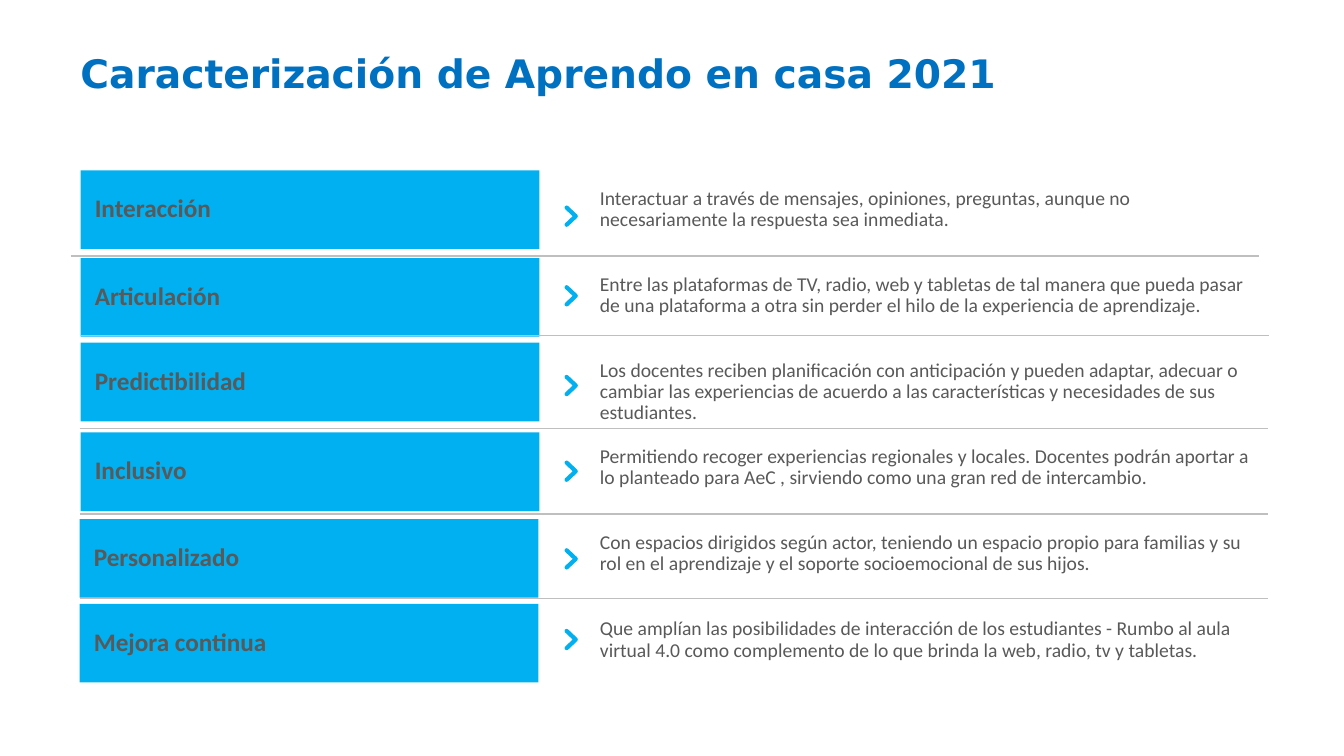
from dataclasses import dataclass

from lxml import etree
from pptx import Presentation
from pptx.dml.color import RGBColor
from pptx.enum import shapes, text
from pptx.oxml import ns
from pptx.util import Inches, Pt


@dataclass(frozen=True)
class Theme:
    title_color: RGBColor = RGBColor.from_string("0070C0")
    accent: RGBColor = RGBColor.from_string("00B0F0")
    ink: RGBColor = RGBColor.from_string("595959")
    rule: RGBColor = RGBColor.from_string("BFBFBF")
    paper: RGBColor = RGBColor.from_string("FFFFFF")
    title_font: str = "DejaVu Sans"
    body_font: str = "Calibri"
    title_size: int = 28
    label_size: int = 18
    detail_size: int = 14


THEME = Theme()

# Feature, label left, label top, chevron top, description
FEATURES = [
    ("Interacción", 0.8, 1.69, 2.06,
     "Interactuar a través de mensajes, opiniones, preguntas, aunque no "
     "necesariamente la respuesta sea inmediata."),
    ("Articulación", 0.8, 2.56, 2.85,
     "Entre las plataformas de TV, radio, web y tabletas de tal manera que pueda "
     "pasar de una plataforma a otra sin perder el hilo de la experiencia de "
     "aprendizaje."),
    ("Predictibilidad", 0.8, 3.4, 3.74,
     "Los docentes reciben planificación con anticipación y pueden adaptar, "
     "adecuar o cambiar las experiencias de acuerdo a las características y "
     "necesidades de sus estudiantes."),
    ("Inclusivo", 0.8, 4.29, 4.59,
     "Permitiendo recoger experiencias regionales y locales. Docentes podrán "
     "aportar a lo planteado para AeC , sirviendo como una gran red de "
     "intercambio."),
    ("Personalizado", 0.79, 5.15, 5.46,
     "Con espacios dirigidos según actor, teniendo un espacio propio para familias "
     "y su rol en el aprendizaje y el soporte socioemocional de sus hijos."),
    ("Mejora continua", 0.79, 5.99, 6.26,
     "Que amplían las posibilidades de interacción de los estudiantes - Rumbo al "
     "aula virtual 4.0 como complemento de lo que brinda la web, radio, tv y "
     "tabletas."),
]

# Left end and height of each separator
SEPARATORS = [(0.7, 2.54), (0.8, 3.33), (0.79, 4.25), (0.79, 5.1), (0.79, 5.94)]
SEPARATOR_WIDTH = 11.79

ROW_HEIGHT = 0.78
DETAIL_TOP, DETAIL_PITCH = 1.76, 0.85 + 0.02 / 5


def write(shape, words, size, color, font, bold=False, margins=(0.1, 0.05, 0.1, 0.05),
          anchor=text.MSO_ANCHOR.MIDDLE):
    frame = shape.text_frame
    frame.word_wrap = True
    frame.vertical_anchor = anchor
    (frame.margin_left, frame.margin_top,
     frame.margin_right, frame.margin_bottom) = map(Inches, margins)
    paragraph = frame.paragraphs[0]
    paragraph.text = words
    paragraph.alignment = text.PP_ALIGN.LEFT
    paragraph.line_spacing = 0.9
    paragraph.font.size = Pt(size)
    paragraph.font.bold = bold
    paragraph.font.name = font
    paragraph.font.color.rgb = color


def add_title(slide, words):
    title = slide.shapes.add_textbox(*map(Inches, (0.7, 0.37, 11.5, 0.76)))
    write(title, words, THEME.title_size, THEME.title_color, THEME.title_font, bold=True)


def add_panel(slide, left, top, width, fill):
    panel = slide.shapes.add_shape(
        shapes.MSO_SHAPE.RECTANGLE,
        Inches(left), Inches(top), Inches(width), Inches(ROW_HEIGHT))
    panel.shadow.inherit = False
    panel.fill.solid()
    panel.fill.fore_color.rgb = fill
    panel.line.fill.background()
    return panel


def add_detail(slide, top, words):
    detail = add_panel(slide, 5.94, top, 6.82, THEME.paper)
    write(detail, words, THEME.detail_size, THEME.ink, THEME.body_font,
          margins=(0.01, 0.11, 0.3, 0.11), anchor=text.MSO_ANCHOR.TOP)


def add_label(slide, left, top, words):
    label = add_panel(slide, left, top, 4.55, THEME.accent)
    write(label, words, THEME.label_size, THEME.ink, THEME.body_font, bold=True,
          margins=(0.14, 0.09, 0.14, 0.09))


def add_separator(slide, left, top):
    separator = slide.shapes.add_connector(
        shapes.MSO_CONNECTOR.STRAIGHT,
        Inches(left), Inches(top), Inches(left + SEPARATOR_WIDTH), Inches(top))
    separator.line.color.rgb = THEME.rule
    separator.line.width = Pt(1)
    etree.SubElement(separator._element.spPr, ns.qn("a:effectLst"))


def add_chevron(slide, top):
    left, width, height = 5.62, 0.09, 0.17
    outline = slide.shapes.build_freeform(Inches(left), Inches(top))
    outline.add_line_segments(
        [(Inches(left + width), Inches(top + height / 2)),
         (Inches(left), Inches(top + height))], close=False)
    chevron = outline.convert_to_shape()
    chevron.shadow.inherit = False
    chevron.fill.background()
    chevron.line.color.rgb = THEME.accent
    chevron.line.width = Pt(3)
    # Rounded ends and corner
    stroke = chevron.line._get_or_add_ln()
    stroke.set("cap", "rnd")
    etree.SubElement(stroke, ns.qn("a:round"))


def main():
    deck = Presentation()
    deck.slide_width, deck.slide_height = Inches(13.33), Inches(7.5)
    slide = deck.slides.add_slide(deck.slide_layouts[6])

    add_title(slide, "Caracterización de Aprendo en casa 2021")

    # Features with their descriptions
    for row, (feature, left, top, _, description) in enumerate(FEATURES):
        add_detail(slide, DETAIL_TOP + row * DETAIL_PITCH, description)
        add_label(slide, left, top, feature)

    # Separators and chevrons lie over the panels
    for left, top in SEPARATORS:
        add_separator(slide, left, top)
    for _, _, _, chevron_top, _ in FEATURES:
        add_chevron(slide, chevron_top)

    deck.save("out.pptx")


if __name__ == "__main__":
    main()
